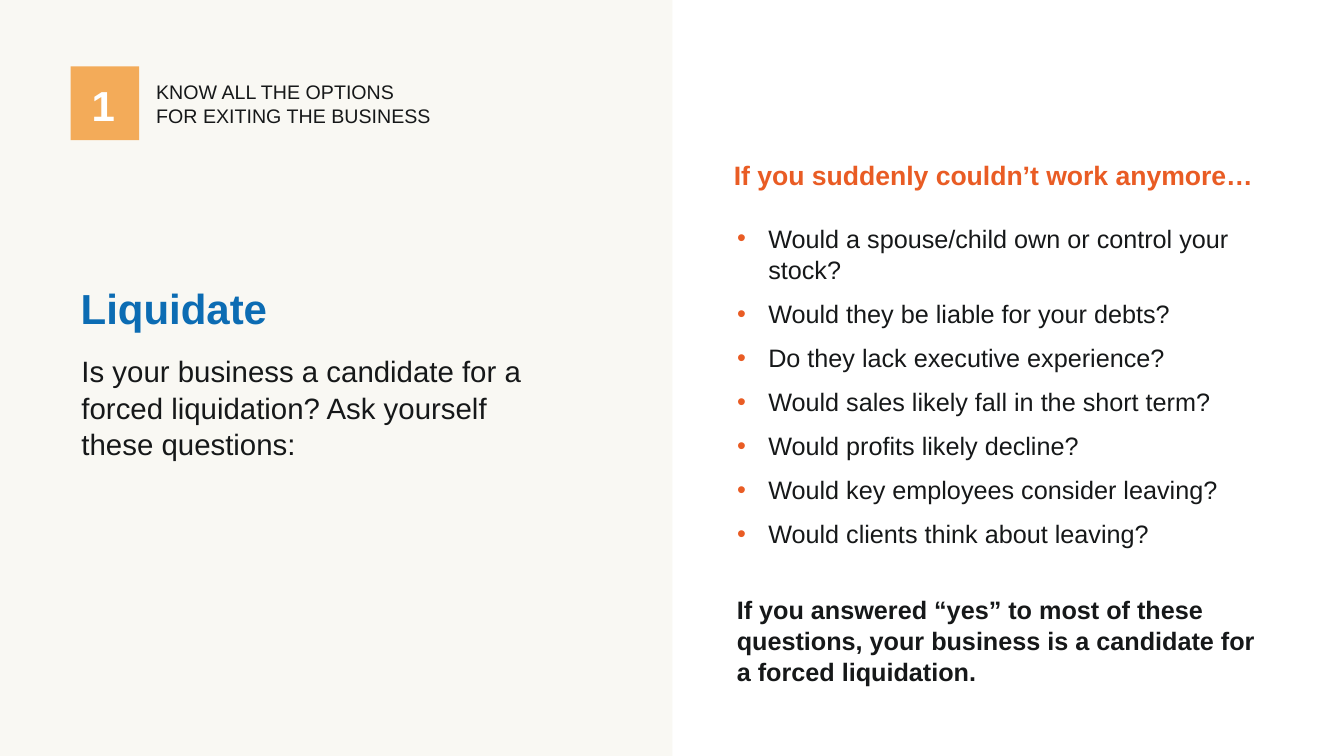
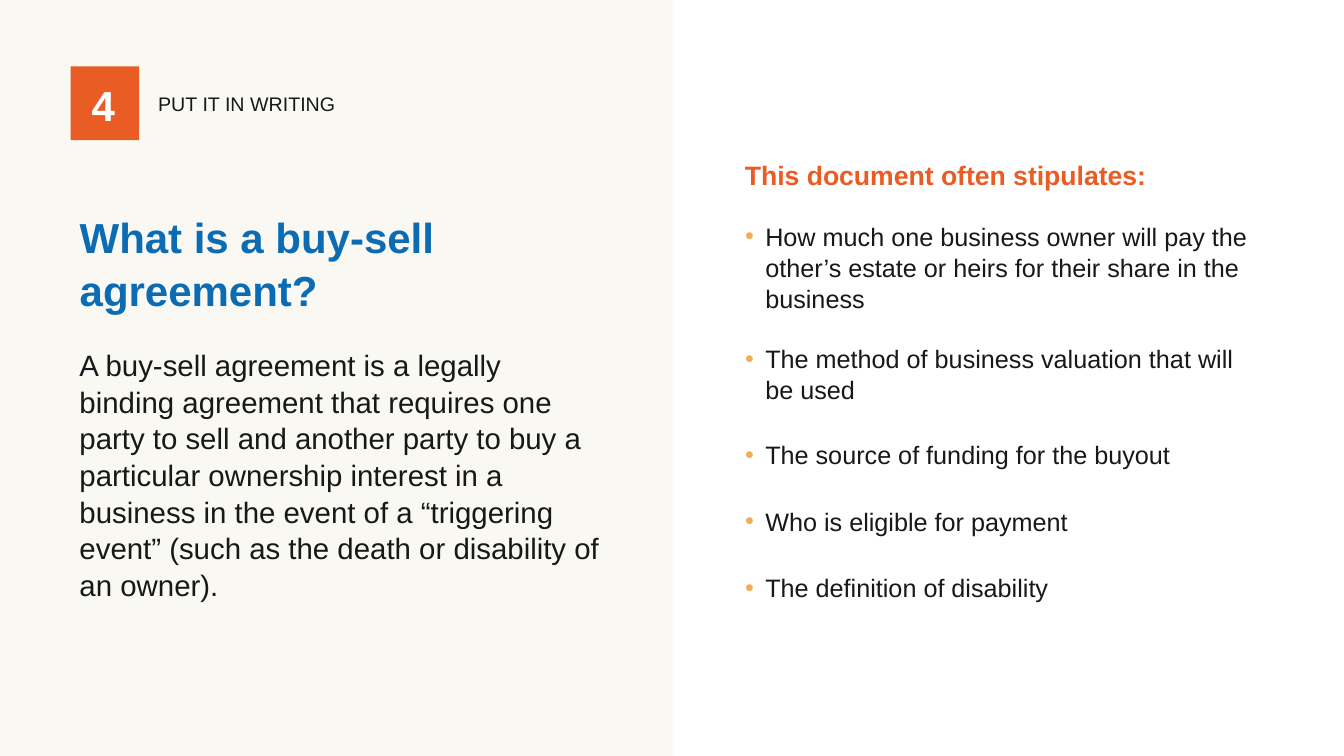
from dataclasses import dataclass

from lxml import etree
from pptx import Presentation
from pptx.dml.color import RGBColor
from pptx.enum.shapes import MSO_SHAPE
from pptx.enum.text import MSO_ANCHOR, MSO_AUTO_SIZE, PP_ALIGN
from pptx.oxml.ns import qn
from pptx.util import Emu, Pt

RECTANGLE = MSO_SHAPE.RECTANGLE
TOP, MIDDLE = MSO_ANCHOR.TOP, MSO_ANCHOR.MIDDLE
LEFT = PP_ALIGN.LEFT
NO_AUTOFIT = MSO_AUTO_SIZE.NONE

PX = 9144  # EMU in one px, 100 px to the inch
PAGE_WIDTH, PAGE_HEIGHT = 1333, 750
TITLE_AND_CONTENT = 1


@dataclass(frozen=True)
class Theme:
    font: str = "Arial"
    paper: str = "F9F8F3"
    panel: str = "FFFFFF"
    ink: str = "161819"
    blue: str = "0C6CB3"
    orange: str = "E95C24"
    amber: str = "F3AB59"
    title_size: int = 30
    lead_size: int = 21
    heading_size: int = 19
    text_size: int = 18
    label_size: int = 14
    line_spacing: float = 1.04


THEME = Theme()


def px(length):
    return Emu(length * PX)


def color(value):
    return RGBColor.from_string(value)


def add_bullet(para, tint, indent):
    props = para._p.get_or_add_pPr()
    props.set("marL", str(px(indent)))
    props.set("indent", str(-px(indent)))
    bullet_color = etree.SubElement(props, qn("a:buClr"))
    etree.SubElement(bullet_color, qn("a:srgbClr"), val=tint)
    etree.SubElement(props, qn("a:buFont"), typeface=THEME.font)
    etree.SubElement(props, qn("a:buChar"), char="•")


def write(shape, *texts, size, tint=THEME.ink, bold=False, anchor=TOP,
          bullet=None, indent=0, gaps=(0,), margin_left=10):
    """Fill a shape with one paragraph per text; the last gap repeats."""
    frame = shape.text_frame
    frame.word_wrap = True
    frame.auto_size = NO_AUTOFIT
    frame.vertical_anchor = anchor
    frame.margin_left, frame.margin_right = px(margin_left), px(10)
    frame.margin_top = frame.margin_bottom = px(5)
    for index, text in enumerate(texts):
        para = frame.add_paragraph() if index else frame.paragraphs[0]
        para.text = text
        para.alignment = LEFT
        para.line_spacing = THEME.line_spacing
        para.space_before = Pt(gaps[min(index, len(gaps) - 1)])
        if bullet:
            add_bullet(para, bullet, indent)
        for span in para.runs:
            span.font.name = THEME.font
            span.font.size = Pt(size)
            span.font.bold = bold
            span.font.color.rgb = color(tint)


class Deck:
    def __init__(self):
        self.deck = Presentation()
        self.deck.slide_width = px(PAGE_WIDTH)
        self.deck.slide_height = px(PAGE_HEIGHT)
        background = self.deck.slide_master.background.fill
        background.solid()
        background.fore_color.rgb = color(THEME.paper)
        self.page = None

    def add_page(self):
        layout = self.deck.slide_layouts[TITLE_AND_CONTENT]
        self.page = self.deck.slides.add_slide(layout)
        half = PAGE_WIDTH // 2 + 1
        panel = self.rectangle(half, 0, PAGE_WIDTH - half, PAGE_HEIGHT, THEME.panel)
        self.page.shapes._spTree.insert(2, panel._element)  # behind the placeholders

    def rectangle(self, left, top, width, height, fill):
        shape = self.page.shapes.add_shape(
            RECTANGLE, px(left), px(top), px(width), px(height))
        shape.shadow.inherit = False
        shape.fill.solid()
        shape.fill.fore_color.rgb = color(fill)
        shape.line.fill.background()
        return shape

    def place(self, holder, left, top, width, height):
        holder.left, holder.top = px(left), px(top)
        holder.width, holder.height = px(width), px(height)
        return holder

    def title(self, text, *place):
        holder = self.place(self.page.shapes.title, *place)
        write(holder, text, size=THEME.title_size, tint=THEME.blue, bold=True)

    def bullets(self, texts, *place, **style):
        holder = self.place(self.page.placeholders[1], *place)
        write(holder, *texts, size=THEME.text_size, **style)

    def text(self, text, left, top, width, height, **style):
        box = self.page.shapes.add_textbox(px(left), px(top), px(width), px(height))
        write(box, text, **style)

    def heading(self, text, left):
        self.text(text, left, 151, 543, 42, size=THEME.heading_size,
                  tint=THEME.orange, bold=True)

    def step(self, number, label, label_left, fill):
        badge = self.rectangle(70, 66, 68, 73, fill)
        write(badge, number, size=THEME.title_size, tint=THEME.panel, bold=True,
              anchor=MIDDLE, margin_left=21)
        self.text(label, label_left, 74, 351, 57, size=THEME.label_size, anchor=MIDDLE)


def main():
    show = Deck()

    # Liquidation questions
    show.add_page()
    show.step("1", "KNOW ALL THE OPTIONS\nFOR EXITING THE BUSINESS", 145, THEME.amber)
    show.title("Liquidate", 70, 273, 519, 61)
    show.text("Is your business a candidate for a forced liquidation? "
              "Ask yourself these questions:",
              71, 344, 491, 116, size=THEME.lead_size)
    show.heading("If you suddenly couldn’t work anymore…", 718)
    show.bullets([
        "Would a spouse/child own or control your stock?",
        "Would they be liable for your debts?",
        "Do they lack executive experience?",
        "Would sales likely fall in the short term?",
        "Would profits likely decline?",
        "Would key employees consider leaving?",
        "Would clients think about leaving?",
    ], 721, 215, 574, 350, bullet=THEME.orange, indent=31, gaps=(0, 9))
    show.text("If you answered “yes” to most of these questions, "
              "your business is a candidate for a forced liquidation.",
              721, 583, 540, 101, size=THEME.text_size, bold=True)

    # Buy-sell agreement
    show.add_page()
    show.step("4", "PUT IT IN WRITING", 147, THEME.orange)
    show.title("What is a buy-sell agreement?", 69, 203, 492, 111)
    show.text("A buy-sell agreement is a legally binding agreement that requires "
              "one party to sell and another party to buy a particular ownership "
              "interest in a business in the event of a “triggering event” "
              "(such as the death or disability of an owner).",
              69, 338, 540, 257, size=THEME.lead_size)
    show.heading("This document often stipulates:", 729)
    show.bullets([
        "How much one business owner will pay the other’s estate or heirs "
        "for their share in the business",
        "The method of business valuation that will be used",
        "The source of funding for the buyout",
        "Who is eligible for payment",
        "The definition of disability",
    ], 729, 213, 527, 380, bullet=THEME.amber, indent=20, gaps=(0, 20, 24, 25))

    show.deck.save("out.pptx")


if __name__ == "__main__":
    main()
